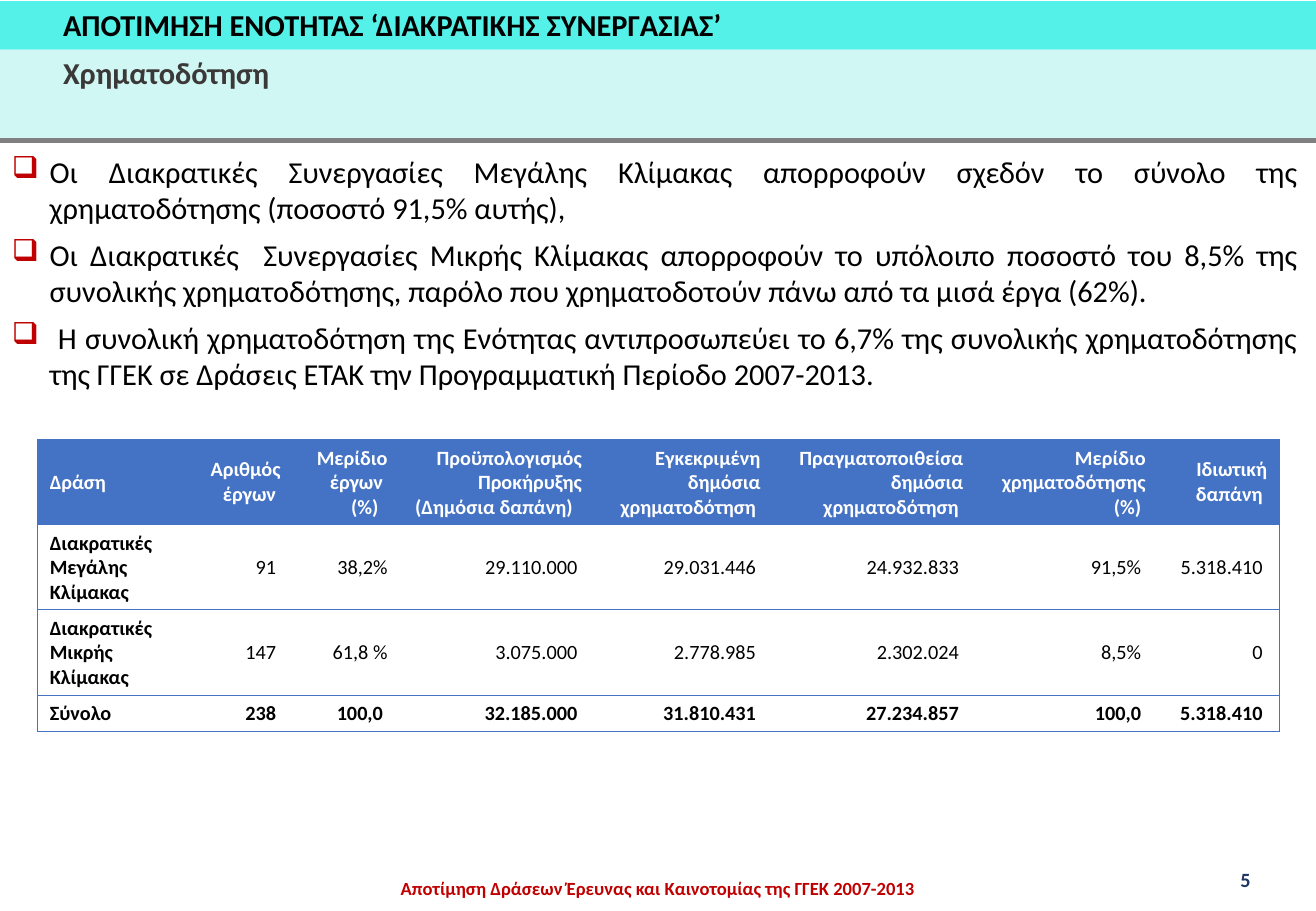
from dataclasses import dataclass

import pptx
import pptx.dml.color
import pptx.enum.shapes
import pptx.enum.text
import pptx.oxml
import pptx.oxml.ns
import pptx.util
from lxml import etree
from pptx.util import Inches

ALIGN = pptx.enum.text.PP_ALIGN


@dataclass(frozen=True)
class Theme:
    font: str = "Calibri"
    title_band: str = "53F1E8"
    subtitle_band: str = "D0F7F3"
    rule: str = "808080"
    accent: str = "C00000"
    table: str = "4472C4"
    text: str = "000000"
    subtitle: str = "3B3838"
    number: str = "203864"
    white: str = "FFFFFF"
    body_size: int = 18
    table_size: int = 12
    footer_size: int = 11


THEME = Theme()

BULLETS = [
    "Οι Διακρατικές Συνεργασίες Μεγάλης Κλίμακας απορροφούν σχεδόν το σύνολο της "
    "χρηματοδότησης (ποσοστό 91,5% αυτής), ",
    "Οι Διακρατικές  Συνεργασίες Μικρής Κλίμακας απορροφούν το υπόλοιπο ποσοστό του 8,5% της "
    "συνολικής χρηματοδότησης, παρόλο που χρηματοδοτούν πάνω από τα μισά έργα (62%).",
    " Η συνολική χρηματοδότηση της Ενότητας αντιπροσωπεύει το 6,7% της συνολικής "
    "χρηματοδότησης της ΓΓΕΚ σε Δράσεις ΕΤΑΚ την Προγραμματική Περίοδο 2007-2013.",
]

COLUMN_WIDTHS = [1.23, 0.87, 0.88, 1.6, 1.47, 1.67, 1.5, 1]
ROW_HEIGHTS = [0.7, 0.7, 0.7, 0.3]
FUNDING = [
    ["Δράση ", "Αριθμός έργων ", "Μερίδιο έργων \n(%)  ",
     "Προϋπολογισμός Προκήρυξης (Δημόσια δαπάνη)  ",
     "Εγκεκριμένη δημόσια χρηματοδότηση ",
     "Πραγματοποιθείσα δημόσια χρηματοδότηση ",
     "Μερίδιο χρηματοδότησης (%) ", "Ιδιωτική δαπάνη "],
    ["Διακρατικές Μεγάλης Κλίμακας ", "91 ", "38,2%", "29.110.000 ",
     "29.031.446 ", "24.932.833 ", "91,5% ", "5.318.410 "],
    ["Διακρατικές Μικρής Κλίμακας ", "147 ", "61,8 %", "3.075.000 ",
     "2.778.985 ", "2.302.024 ", "8,5% ", "0 "],
    ["Σύνολο ", "238 ", "100,0 ", "32.185.000 ",
     "31.810.431 ", "27.234.857 ", "100,0 ", "5.318.410 "],
]


def rgb(color):
    return pptx.dml.color.RGBColor.from_string(color)


def style(para, size, color, bold=False, align=ALIGN.LEFT):
    para.alignment = align
    para.font.name = THEME.font
    para.font.size = pptx.util.Pt(size)
    para.font.bold = bold
    para.font.color.rgb = rgb(color)


def add_band(page, top, height, color):
    band = page.shapes.add_shape(pptx.enum.shapes.MSO_SHAPE.RECTANGLE,
                                 0, Inches(top), Inches(10.83), Inches(height))
    band.shadow.inherit = False
    band.fill.solid()
    band.fill.fore_color.rgb = rgb(color)
    band.line.fill.background()


def add_rule(page, top):
    rule = page.shapes.add_connector(pptx.enum.shapes.MSO_CONNECTOR.STRAIGHT,
                                     0, Inches(top), Inches(10.83), Inches(top))
    rule.line.color.rgb = rgb(THEME.rule)
    rule.line.width = pptx.util.Pt(3)
    etree.SubElement(rule._element.spPr, pptx.oxml.ns.qn("a:effectLst"))


def add_box(page, left, top, width, height, wrap=True):
    box = page.shapes.add_textbox(Inches(left), Inches(top), Inches(width), Inches(height))
    box.text_frame.word_wrap = wrap
    return box.text_frame


def add_label(page, text, place, size, color, wrap=True):
    para = add_box(page, *place, wrap=wrap).paragraphs[0]
    para.text = text
    style(para, size, color, bold=True)


def add_footer(page):
    frame = add_box(page, 2.82, 7.05, 5.19, 0.38)
    frame.margin_left = frame.margin_top = frame.margin_right = frame.margin_bottom = 0
    para = frame.paragraphs[0]
    para.text = "Aποτίμηση Δράσεων Έρευνας και Καινοτομίας της ΓΓΕΚ 2007-2013"
    para.line_spacing = pptx.util.Pt(25.3)
    style(para, THEME.footer_size, THEME.accent, bold=True, align=ALIGN.CENTER)


def set_bullet(para):
    properties = para._p.get_or_add_pPr()
    properties.set("marL", str(Inches(0.31)))
    properties.set("indent", str(-Inches(0.31)))
    color = etree.SubElement(properties, pptx.oxml.ns.qn("a:buClr"))
    etree.SubElement(color, pptx.oxml.ns.qn("a:srgbClr"), val=THEME.accent)
    etree.SubElement(properties, pptx.oxml.ns.qn("a:buChar"), char="❑")


def add_bullets(page):
    frame = add_box(page, 0, 1.21, 10.78, 2.09)
    for index, text in enumerate(BULLETS):
        para = frame.add_paragraph() if index else frame.paragraphs[0]
        para.text = text
        set_bullet(para)
        para.space_after = pptx.util.Pt(6)
        style(para, THEME.body_size, THEME.text, align=ALIGN.JUSTIFY)


def set_borders(cell, visible):
    """Draw the sides named in visible (of L, R, T, B) and hide the others."""
    properties = cell._tc.get_or_add_tcPr()
    for side in "LRTB":
        line = etree.SubElement(properties, pptx.oxml.ns.qn(f"a:ln{side}"),
                                w=str(pptx.util.Pt(0.5)))
        if side in visible:
            fill = etree.SubElement(line, pptx.oxml.ns.qn("a:solidFill"))
            etree.SubElement(fill, pptx.oxml.ns.qn("a:srgbClr"), val=THEME.table)
        else:
            etree.SubElement(line, pptx.oxml.ns.qn("a:noFill"))


def fill_cell(cell, text, row, column):
    header = row == 0
    last_column = len(COLUMN_WIDTHS) - 1
    set_borders(cell, "TB" + {0: "L", last_column: "R"}.get(column, ""))
    if header:
        cell.fill.solid()
        cell.fill.fore_color.rgb = rgb(THEME.table)
    else:
        cell.fill.background()
    cell.vertical_anchor = pptx.enum.text.MSO_ANCHOR.MIDDLE
    cell.text = text
    for para in cell.text_frame.paragraphs:
        style(para, THEME.table_size, THEME.white if header else THEME.text,
              bold=column == 0 or row in (0, len(FUNDING) - 1),
              align=ALIGN.RIGHT if column else ALIGN.LEFT)


def add_funding_table(page):
    table = page.shapes.add_table(len(ROW_HEIGHTS), len(COLUMN_WIDTHS), Inches(0.31),
                                  Inches(3.62), Inches(10.22), Inches(2.4)).table
    table.first_row = table.horz_banding = False
    for column, width in zip(table.columns, COLUMN_WIDTHS):
        column.width = Inches(width)
    for row, height in zip(table.rows, ROW_HEIGHTS):
        row.height = Inches(height)
    for row, texts in enumerate(FUNDING):
        for column, text in enumerate(texts):
            fill_cell(table.cell(row, column), text, row, column)


def main():
    deck = pptx.Presentation()
    deck.slide_width, deck.slide_height = Inches(10.83), Inches(7.5)
    page = deck.slides.add_slide(deck.slide_layouts[6])
    add_footer(page)
    add_label(page, "5", (10.11, 7.09, 0.52, 0.3), THEME.table_size, THEME.number)
    add_band(page, 0.01, 0.4, THEME.title_band)
    add_band(page, 0.41, 0.75, THEME.subtitle_band)
    add_rule(page, 1.16)
    add_label(page, "ΑΠΟΤΙΜΗΣΗ ΕΝΟΤΗΤΑΣ ‘ΔΙΑΚΡΑΤΙΚΗΣ ΣΥΝΕΡΓΑΣΙΑΣ’",
              (0.42, 0, 5.68, 0.4), THEME.body_size, THEME.text, wrap=False)
    add_label(page, "Χρηματοδότηση", (0.42, 0.4, 1.91, 0.4),
              THEME.body_size, THEME.subtitle, wrap=False)
    add_funding_table(page)
    add_bullets(page)
    deck.save("out.pptx")


if __name__ == "__main__":
    main()
